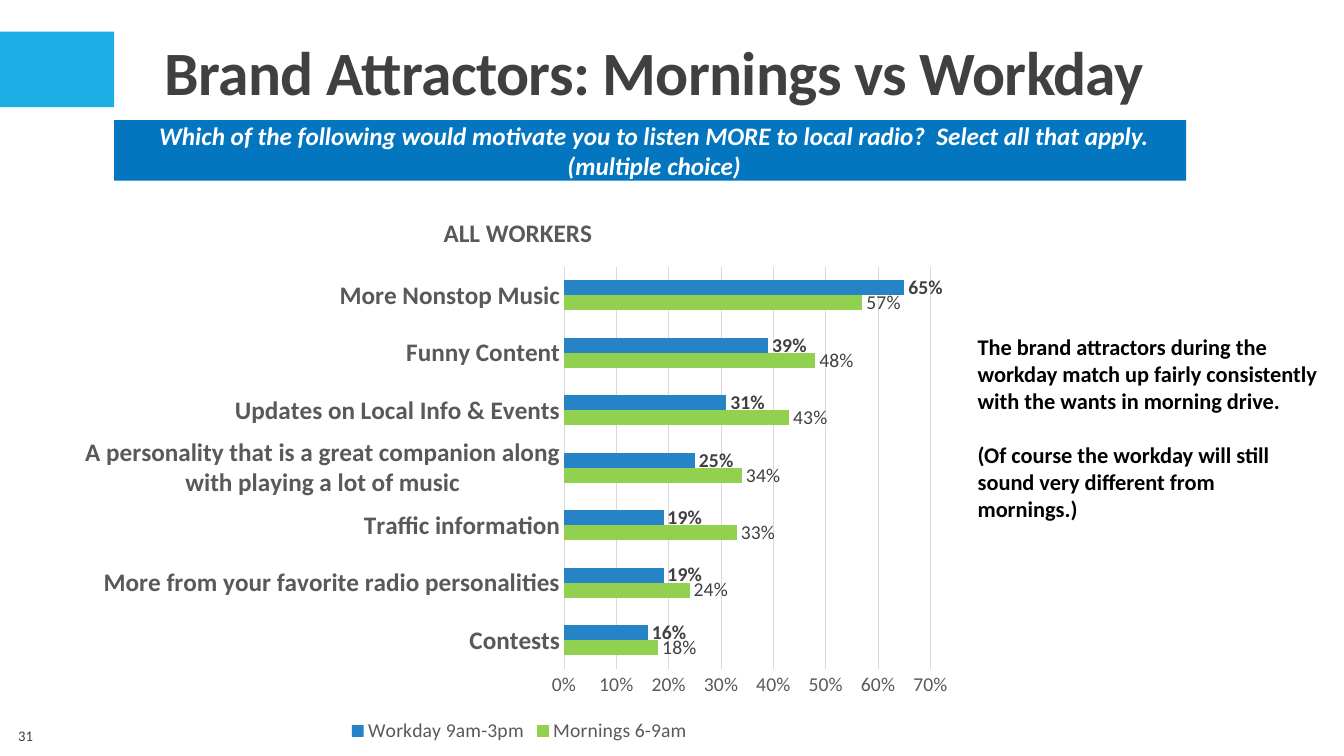
from dataclasses import dataclass

from lxml import etree
from pptx import Presentation
from pptx.chart.data import CategoryChartData
from pptx.dml.color import RGBColor
from pptx.enum.chart import XL_CHART_TYPE, XL_LABEL_POSITION, XL_LEGEND_POSITION, XL_TICK_MARK
from pptx.enum.shapes import MSO_SHAPE
from pptx.enum.text import MSO_ANCHOR, PP_ALIGN
from pptx.oxml.ns import qn
from pptx.util import Inches, Pt

RECT = MSO_SHAPE.RECTANGLE
TOP, MIDDLE, BOTTOM = MSO_ANCHOR.TOP, MSO_ANCHOR.MIDDLE, MSO_ANCHOR.BOTTOM
LEFT, CENTER, RIGHT = PP_ALIGN.LEFT, PP_ALIGN.CENTER, PP_ALIGN.RIGHT
BAR = XL_CHART_TYPE.BAR_CLUSTERED
LEGEND_BOTTOM = XL_LEGEND_POSITION.BOTTOM
OUTSIDE = XL_LABEL_POSITION.OUTSIDE_END
NO_TICK = XL_TICK_MARK.NONE

COLUMNS, ROWS = 160, 90

CATEGORIES = [
    "Contests",
    "More from your favorite radio personalities",
    "Traffic information",
    "A personality that is a great companion along with playing a lot of music",
    "Updates on Local Info & Events",
    "Funny Content",
    "More Nonstop Music",
]
MORNINGS = [0.18, 0.24, 0.33, 0.34, 0.43, 0.48, 0.57]
WORKDAY = [0.16, 0.19, 0.19, 0.25, 0.31, 0.39, 0.65]


@dataclass(frozen=True)
class Theme:
    font: str = "Calibri"
    accent: str = "1CADE4"
    banner: str = "0476BF"
    workday: str = "2683C6"
    mornings: str = "92D050"
    white: str = "FFFFFF"
    black: str = "000000"
    dark: str = "404040"
    gray: str = "595959"
    grid: str = "D9D9D9"
    title: float = 44
    heading: float = 18
    body: float = 16
    label: float = 14
    small: float = 10.5


class SlideBuilder:
    """Draws styled elements on one slide, placed on a grid of columns and rows."""

    def __init__(self, prs, theme):
        self.theme = theme
        self.slide = prs.slides.add_slide(prs.slide_layouts[6])
        self.col = prs.slide_width / COLUMNS
        self.row = prs.slide_height / ROWS

    def place(self, x, y, w, h):
        return (round(x * self.col), round(y * self.row),
                round(w * self.col), round(h * self.row))

    def style(self, font, size, color, bold=False, italic=False):
        font.name = self.theme.font
        font.size = Pt(size)
        font.bold = bold
        font.italic = italic
        font.color.rgb = RGBColor.from_string(color)

    def block(self, box, color):
        sp = self.slide.shapes.add_shape(RECT, *self.place(*box))
        sp.shadow.inherit = False
        sp.fill.solid()
        sp.fill.fore_color.rgb = RGBColor.from_string(color)
        sp.line.fill.background()
        return sp

    def fill_text(self, sp, lines, size, color, align=LEFT, anchor=TOP,
                  bold=False, italic=False, gap=0):
        tf = sp.text_frame
        tf.word_wrap = True
        tf.vertical_anchor = anchor
        tf.text = "\n".join(lines)
        for i, p in enumerate(tf.paragraphs):
            p.alignment = align
            if i:
                p.space_before = Pt(gap)
            for r in p.runs:
                self.style(r.font, size, color, bold, italic)
        return tf

    def text(self, box, lines, size, color, **options):
        sp = self.slide.shapes.add_textbox(*self.place(*box))
        return self.fill_text(sp, lines, size, color, **options)

    def layout(self, parent, before, **shares):
        old = parent.find(qn("c:layout"))
        if old is not None:
            parent.remove(old)
        layout = etree.Element(qn("c:layout"))
        manual = etree.SubElement(layout, qn("c:manualLayout"))
        if "w" in shares:
            etree.SubElement(manual, qn("c:layoutTarget")).set("val", "inner")
        for axis in ("x", "y"):
            etree.SubElement(manual, qn(f"c:{axis}Mode")).set("val", "edge")
        for name, share in shares.items():
            etree.SubElement(manual, qn(f"c:{name}")).set("val", str(share))
        parent.find(qn(before)).addprevious(layout)

    def bar_chart(self, box, title, categories, series):
        t = self.theme
        data = CategoryChartData(number_format="0%")
        data.categories = categories
        for name, values, _, _ in series:
            data.add_series(name, values)
        chart = self.slide.shapes.add_chart(BAR, *self.place(*box), data).chart
        self.style(chart.font, t.label, t.gray)

        chart.has_title = True
        tf = chart.chart_title.text_frame
        tf.text = title
        self.style(tf.paragraphs[0].runs[0].font, t.heading, t.gray, bold=True)
        chart.chart_title.include_in_layout = False
        heading = chart._chartSpace.find(f".//{qn('c:title')}")
        self.layout(heading, "c:overlay", x=0.41, y=0.04)

        chart.has_legend = True
        chart.legend.position = LEGEND_BOTTOM
        chart.legend.include_in_layout = False
        self.style(chart.legend.font, t.label, t.gray)

        cat, val = chart.category_axis, chart.value_axis
        for axis, size in ((cat, t.heading), (val, t.label)):
            axis.major_tick_mark = axis.minor_tick_mark = NO_TICK
            self.style(axis.tick_labels.font, size, t.gray, bold=axis is cat)
        val.minimum_scale, val.maximum_scale, val.major_unit = 0, 0.7, 0.1
        val.tick_labels.number_format = "0%"
        val.tick_labels.number_format_is_linked = False
        val.format.line.fill.background()
        val.has_major_gridlines = True
        for line in (cat.format.line, val.major_gridlines.format.line):
            line.color.rgb = RGBColor.from_string(t.grid)
            line.width = Pt(0.75)

        plot = chart.plots[0]
        plot.gap_width = 182
        plot.overlap = 0
        plot.vary_by_categories = False
        for bars, (_, _, color, bold) in zip(plot.series, series):
            bars.format.fill.solid()
            bars.format.fill.fore_color.rgb = RGBColor.from_string(color)
            labels = bars.data_labels
            labels.show_value = True
            labels.number_format = "0%"
            labels.number_format_is_linked = False
            labels.position = OUTSIDE
            self.style(labels.font, t.label, t.dark, bold=bold)
        area = chart._chartSpace.find(f".//{qn('c:plotArea')}")
        self.layout(area, "c:barChart", x=0.55, y=0.14, w=0.41, h=0.72)


def main():
    prs = Presentation()
    prs.slide_width, prs.slide_height = Inches(13.33), Inches(7.5)
    t = Theme()
    s = SlideBuilder(prs, t)

    s.block((0, 3.75, 13.6, 9), t.accent)
    banner = s.block((13.6, 14.3, 127.6, 7.2), t.banner)
    tf = s.fill_text(banner, ["Which of the following would motivate you to listen MORE to local radio?"
                              "  Select all that apply. (multiple choice)"],
                     t.heading, t.white, align=CENTER, anchor=MIDDLE, bold=True, italic=True)
    tf.margin_left = Inches(0.18)

    tf = s.text((11.9, 4.56, 132, 9), ["Brand Attractors: Mornings vs Workday"],
                t.title, t.dark, align=CENTER, anchor=BOTTOM, bold=True)
    p = tf.paragraphs[0]
    p.line_spacing = 0.9
    p.runs[0].font._element.set("spc", "-50")

    s.text((115.2, 39.1, 43.1, 23.9),
           ["The brand attractors during the workday match up fairly consistently "
            "with the wants in morning drive.",
            "(Of course the workday will still sound very different from mornings.)"],
           t.body, t.black, bold=True, gap=19.5)
    s.bar_chart((8.64, 22.44, 106.4, 66.5), "ALL WORKERS", CATEGORIES,
                [("Mornings 6-9am", MORNINGS, t.mornings, False),
                 ("Workday 9am-3pm", WORKDAY, t.workday, True)])
    s.text((0, 85.2, 5.1, 4.8), ["31"], t.small, t.dark, align=RIGHT, anchor=MIDDLE)
    prs.save("out.pptx")


if __name__ == "__main__":
    main()
